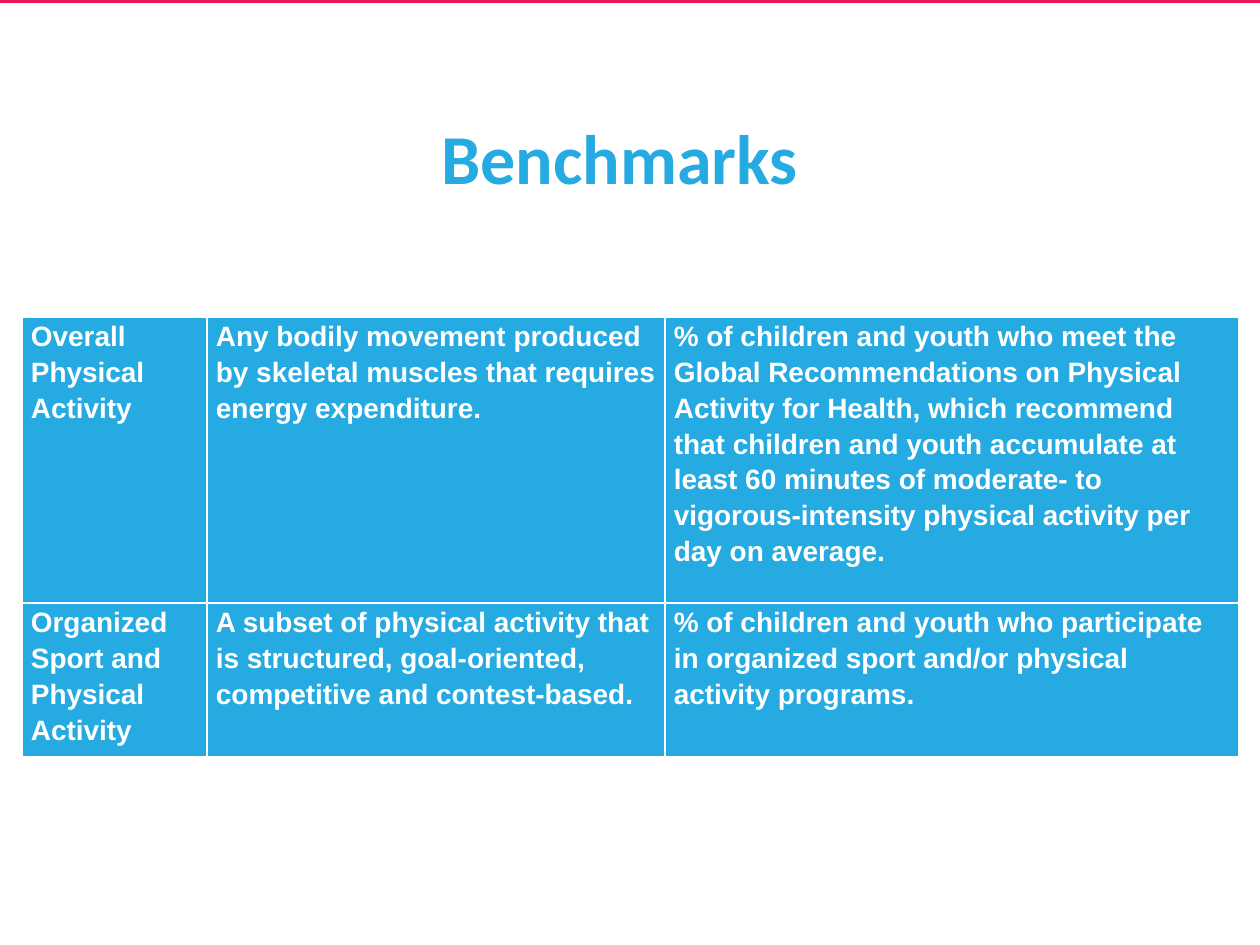
import dataclasses

import lxml.etree
import pptx
import pptx.dml.color
import pptx.enum.shapes
import pptx.enum.text
import pptx.oxml.ns
import pptx.util

PX = 914400 / 126
BLUE, WHITE, PINK = "25AAE1", "FFFFFF", "EA1656"
COLUMNS = (185, 458, 574)


@dataclasses.dataclass(frozen=True)
class Benchmark:
    """One table row: an indicator, its definition and its benchmark."""
    indicator: str
    definition: str
    benchmark: str
    height: int


BENCHMARKS = (
    Benchmark(
        "Overall Physical Activity",
        "Any bodily movement produced by skeletal muscles that requires energy expenditure.",
        "% of children and youth who meet the Global Recommendations on Physical Activity "
        "for Health, which recommend that children and youth accumulate at least 60 minutes "
        "of moderate- to vigorous-intensity physical activity per day on average.",
        286,
    ),
    Benchmark(
        "Organized Sport and Physical Activity",
        "A subset of physical activity that is structured, goal-oriented, competitive "
        "and contest-based.",
        "% of children and youth who participate in organized sport and/or physical "
        "activity programs.",
        154,
    ),
)


def px(n: int) -> int:
    """Turn pixels into EMU."""
    return round(n * PX)


def rgb(value: str) -> pptx.dml.color.RGBColor:
    """Turn a hex string into a colour."""
    return pptx.dml.color.RGBColor.from_string(value)


def write(tf, text: str, *, size: int, font: str, color: str, bold: bool = True,
          align=pptx.enum.text.PP_ALIGN.LEFT, spacing: float = 1.0) -> None:
    """Put one formatted paragraph into a text frame."""
    p = tf.paragraphs[0]
    p.alignment, p.line_spacing = align, spacing
    r = p.add_run()
    r.text = text
    r.font.size, r.font.name, r.font.bold = pptx.util.Pt(size), font, bold
    r.font.color.rgb = rgb(color)


def add_borders(cell, color: str, width: int) -> None:
    """Draw solid lines on all four sides of a cell."""
    qn = pptx.oxml.ns.qn
    props = cell._tc.get_or_add_tcPr()
    for i, side in enumerate(("lnL", "lnR", "lnT", "lnB")):
        ln = lxml.etree.Element(qn(f"a:{side}"), w=str(pptx.util.Pt(width)))
        fill = lxml.etree.SubElement(ln, qn("a:solidFill"))
        lxml.etree.SubElement(fill, qn("a:srgbClr"), val=color)
        props.insert(i, ln)


def format_cell(cell, text: str) -> None:
    """Fill, border and write one table cell."""
    cell.fill.solid()
    cell.fill.fore_color.rgb = rgb(BLUE)
    cell.margin_left = cell.margin_right = px(9)
    cell.margin_top = cell.margin_bottom = 0
    add_borders(cell, WHITE, 1)
    write(cell.text_frame, text, size=16, font="Arial", color=WHITE, spacing=1.15)


def add_benchmarks(s, left: int, top: int) -> None:
    """Add the table of benchmarks."""
    height = sum(b.height for b in BENCHMARKS)
    table = s.shapes.add_table(len(BENCHMARKS), len(COLUMNS), px(left), px(top),
                               px(sum(COLUMNS)), px(height)).table
    for column, width in zip(table.columns, COLUMNS):
        column.width = px(width)
    for row, b in zip(table.rows, BENCHMARKS):
        row.height = px(b.height)
        for cell, text in zip(row.cells, (b.indicator, b.definition, b.benchmark)):
            format_cell(cell, text)


def add_top_bar(s, width: int, height: int) -> None:
    """Add the thin bar along the top edge."""
    sp = s.shapes.add_shape(pptx.enum.shapes.MSO_SHAPE.RECTANGLE, 0, 0, px(width), px(height))
    sp.shadow.inherit = False
    sp.fill.solid()
    sp.fill.fore_color.rgb = rgb(PINK)
    sp.line.fill.background()


def add_title(s, text: str) -> None:
    """Place and write the title."""
    sp = s.shapes.title
    sp.left, sp.top, sp.width, sp.height = map(px, (126, 106, 987, 101))
    sp.text_frame.vertical_anchor = pptx.enum.text.MSO_ANCHOR.MIDDLE
    write(sp.text_frame, text, size=40, font="Calibri", color=BLUE,
          align=pptx.enum.text.PP_ALIGN.CENTER)


def main() -> None:
    """Build and save the slide."""
    prs = pptx.Presentation()
    prs.slide_width, prs.slide_height = px(1260), px(945)
    s = prs.slides.add_slide(prs.slide_layouts.get_by_name("Title Only"))
    add_top_bar(s, 1260, 3)
    add_title(s, "Benchmarks")
    add_benchmarks(s, 22, 317)
    prs.save("out.pptx")


if __name__ == "__main__":
    main()
